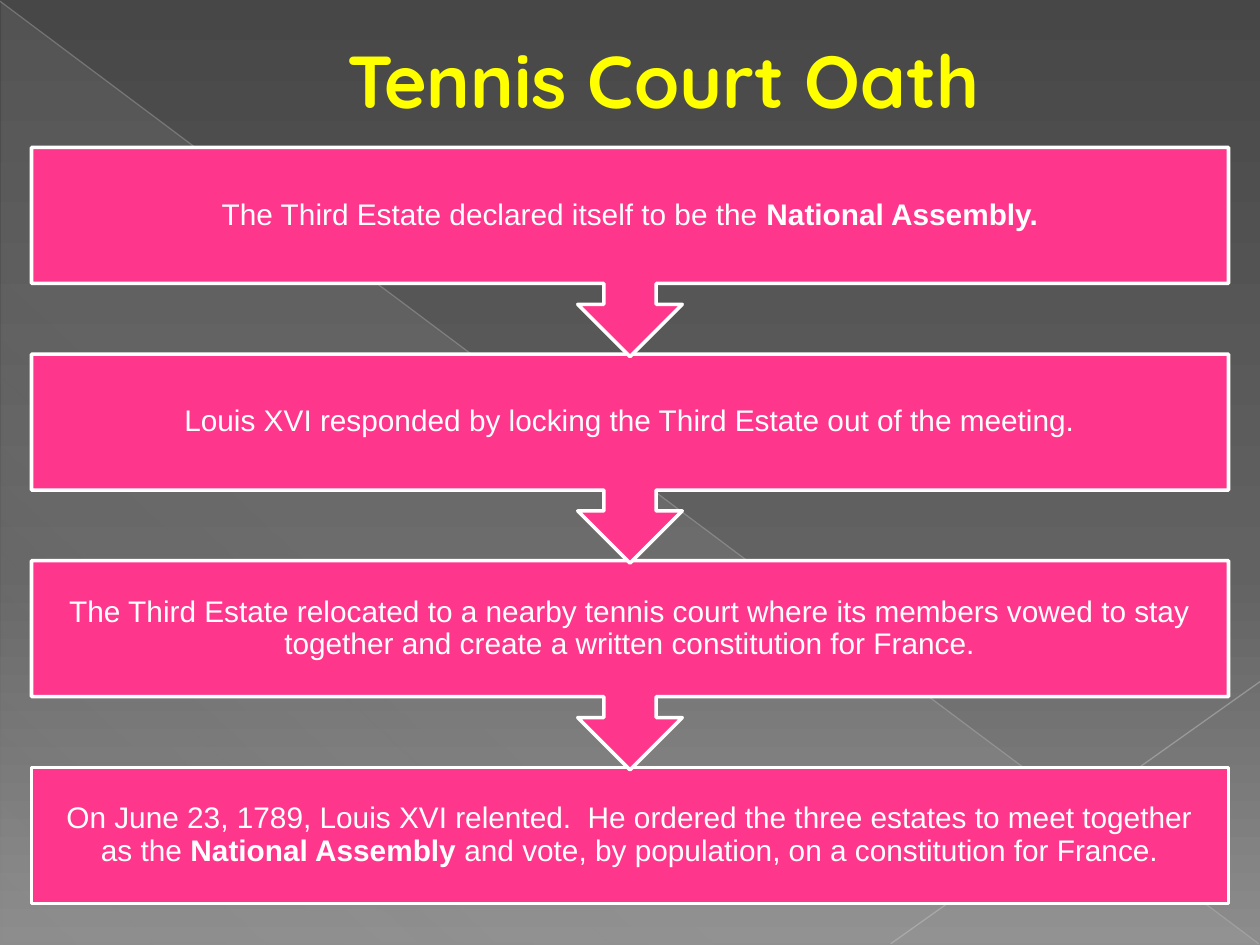
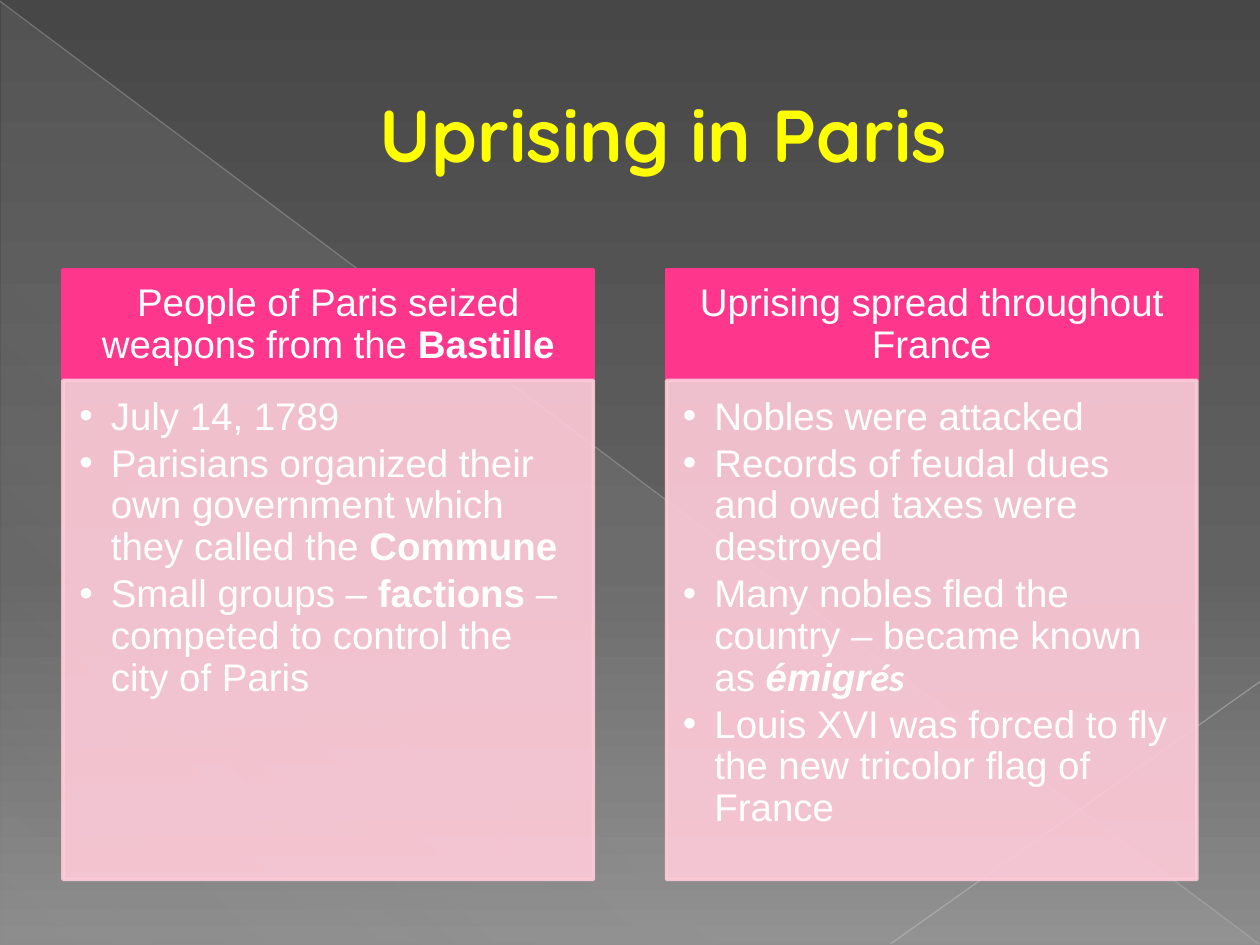
import pptx
import pptx.util
import pptx.oxml
import pptx.oxml.ns
import pptx.dml.color
import pptx.enum.shapes
import pptx.enum.text
import lxml.etree as etree

PX = 9144  # 100 px to the inch
COLORS = {"pink": "FF378C", "pale": "FFCBD9", "white": "FFFFFF", "yellow": "FFFF00",
          "glow": "D2D2D2", "ray": "BEBEBE", "ray2": "C5C5C5",
          "dark": "474747", "mid": "626262", "light": "8C8C8C"}
RGB = {name: pptx.dml.color.RGBColor.from_string(c) for name, c in COLORS.items()}
SHAPE = pptx.enum.shapes.MSO_SHAPE
ALIGN = pptx.enum.text.PP_ALIGN
ANCHOR = pptx.enum.text.MSO_ANCHOR
qn = pptx.oxml.ns.qn
BOLD = {"bold": True}


def paint(parent, stops, angle=None):
    """Replace a solid fill by (position, colour, opacity) stops; one stop stays solid."""
    fill = etree.Element(qn("a:solidFill" if angle is None else "a:gradFill"))
    holder = fill if angle is None else etree.SubElement(fill, qn("a:gsLst"))
    for pos, color, alpha in stops:
        gs = holder
        if angle is not None:
            gs = etree.SubElement(holder, qn("a:gs"), pos=str(pos * 1000))
        clr = etree.SubElement(gs, qn("a:srgbClr"), val=COLORS[color])
        etree.SubElement(clr, qn("a:alpha"), val=str(alpha * 1000))
    if angle is not None:
        etree.SubElement(fill, qn("a:lin"), ang=str(angle * 60000), scaled="0")
    parent.replace(parent.find(qn("a:solidFill")), fill)


def write(sp, paras, size, insets, font="Arial", color="white", bold=False,
          align=ALIGN.CENTER, anchor=ANCHOR.MIDDLE, spacing=0.9, left=0, bullet=False):
    """Fill a shape with paragraphs, each a list of (text, format) runs."""
    tf = sp.text_frame
    tf.word_wrap = True
    tf.vertical_anchor = anchor
    for side, inset in zip(("left", "top", "right", "bottom"), insets):
        setattr(tf, "margin_" + side, inset * PX)
    for i, runs in enumerate(paras):
        p = tf.add_paragraph() if i else tf.paragraphs[0]
        p.alignment = align
        p.line_spacing = spacing
        p.space_before = pptx.util.Pt(3.3 if i else 0)
        pPr = p._p.get_or_add_pPr()
        pPr.set("marL", str(left * PX))
        pPr.set("indent", str(-left * PX if bullet else 0))
        if bullet:
            clr = etree.SubElement(pPr, qn("a:buClr"))
            etree.SubElement(clr, qn("a:srgbClr"), val=COLORS[color])
            etree.SubElement(pPr, qn("a:buFont"), typeface="Arial")
            etree.SubElement(pPr, qn("a:buChar"), char="•")
        for text, fmt in runs:
            r = p.add_run()
            r.text = text
            r.font.color.rgb = RGB[color]
            values = {"name": font, "size": pptx.util.Pt(size), "bold": bold, **fmt}
            for key, value in values.items():
                setattr(r.font, key, value)


prs = pptx.Presentation()
prs.slide_width, prs.slide_height = 1000 * PX, 750 * PX

# Background, rays and title of both slides
slides = []
for title, top, height in (("Tennis Court Oath", 0, 125), ("Uprising in Paris", 29, 153)):
    slide = prs.slides.add_slide(prs.slide_layouts[6])
    slides.append(slide)
    slide.background.fill.solid()
    paint(slide.element.find(".//" + qn("p:bgPr")),
          [(0, "dark", 100), (60, "mid", 100), (100, "light", 100)], 90)

    sp = slide.shapes.add_shape(SHAPE.RIGHT_TRIANGLE, 1 * PX, 2 * PX, 999 * PX, 748 * PX)
    sp.shadow.inherit = False
    sp.line.fill.background()
    sp.fill.solid()
    paint(sp.element.spPr, [(0, "glow", 10), (70, "glow", 8), (100, "glow", 1)], 133)

    for ends, color, alpha in (((0, 1, 999, 749), "ray", 35), ((1000, 541, 707, 749), "ray2", 45)):
        ray = slide.shapes.add_connector(pptx.enum.shapes.MSO_CONNECTOR.STRAIGHT,
                                         *[v * PX for v in ends])
        ray.line.width = pptx.util.Pt(0.75)
        ray.line.fill.solid()
        spPr = ray.element.spPr
        paint(spPr.find(qn("a:ln")), [(0, color, alpha)])
        etree.SubElement(spPr, qn("a:effectLst"))

    sp = slide.shapes.add_textbox(50 * PX, top * PX, 900 * PX, height * PX)
    write(sp, [[(title, {})]], 42, (10, 5, 10, 5), font="Quicksand", color="yellow",
          bold=True, spacing=1.0, left=53)

# Slide 1: chain of events, last one first so that each arrow lies on the next box
events = [
    [("The Third Estate declared itself to be the ", {}), ("National Assembly.", BOLD)],
    [("Louis XVI responded by locking the Third Estate out of the meeting.", {})],
    [("The Third Estate relocated to a nearby tennis court where its members vowed to stay "
      "together and create a written constitution for France.", {})],
    [("On June 23, 1789, Louis XVI relented.  He ordered the three estates to meet together "
      "as the ", {}), ("National Assembly", BOLD),
     (" and vote, by population, on a constitution for France.", {})],
]
shapes = slides[0].shapes
for i in reversed(range(len(events))):
    x, y, w, h = 25 * PX, (117 + 164 * i) * PX, 950 * PX, 108 * PX
    if i == len(events) - 1:
        sp = shapes.add_shape(SHAPE.RECTANGLE, x, y, w, h)
    else:
        sp = shapes.add_shape(SHAPE.UP_ARROW_CALLOUT, x, y, w, 166 * PX)
        sp.rotation = 180
        for k, value in enumerate((0.25, 0.25, 0.25, 0.65)):
            sp.adjustments[k] = value
    sp.shadow.inherit = False
    sp.fill.solid()
    sp.fill.fore_color.rgb = RGB["pink"]
    sp.line.color.rgb = RGB["white"]
    sp.line.width = pptx.util.Pt(2)
    write(shapes.add_textbox(x, y, w, h), [events[i]], 17, (13, 13, 13, 13))

# Slide 2: two columns, each a heading over a bulleted list
columns = [
    ([("People of Paris seized weapons from the ", {}), ("Bastille", BOLD)],
     [[("July 14, 1789", {})],
      [("Parisians organized their own government which they called the ", {}),
       ("Commune", BOLD)],
      [("Small groups – ", {}), ("factions", BOLD),
       (" – competed to control the city of Paris", {})]]),
    ([("Uprising spread throughout France", {})],
     [[("Nobles were attacked", {})],
      [("Records of feudal dues and owed taxes were destroyed", {})],
      [("Many nobles fled the country – became known as ", {}),
       ("émigr", {"bold": True, "italic": True}),
       ("és", {"bold": True, "italic": True, "name": "Calibri"})],
      [("Louis XVI was forced to fly the new tricolor flag of France", {})]]),
]
for i, (heading, points) in enumerate(columns):
    for y, h, color, alpha in ((214, 88, "pink", 100), (302, 396, "pale", 90)):
        sp = slides[1].shapes.add_shape(SHAPE.RECTANGLE, (50 + 479 * i) * PX, y * PX,
                                        421 * PX, h * PX)
        sp.shadow.inherit = False
        sp.fill.solid()
        sp.line.fill.solid()
        sp.line.width = pptx.util.Pt(2)
        spPr = sp.element.spPr
        for part in (spPr, spPr.find(qn("a:ln"))):
            paint(part, [(0, color, alpha)])
        if color == "pink":
            write(sp, [heading], 22, (17, 10, 17, 10))
        else:
            write(sp, points, 22, (13, 13, 17, 19), align=ALIGN.LEFT, anchor=ANCHOR.TOP,
                  left=25, bullet=True)

prs.save("out.pptx")
